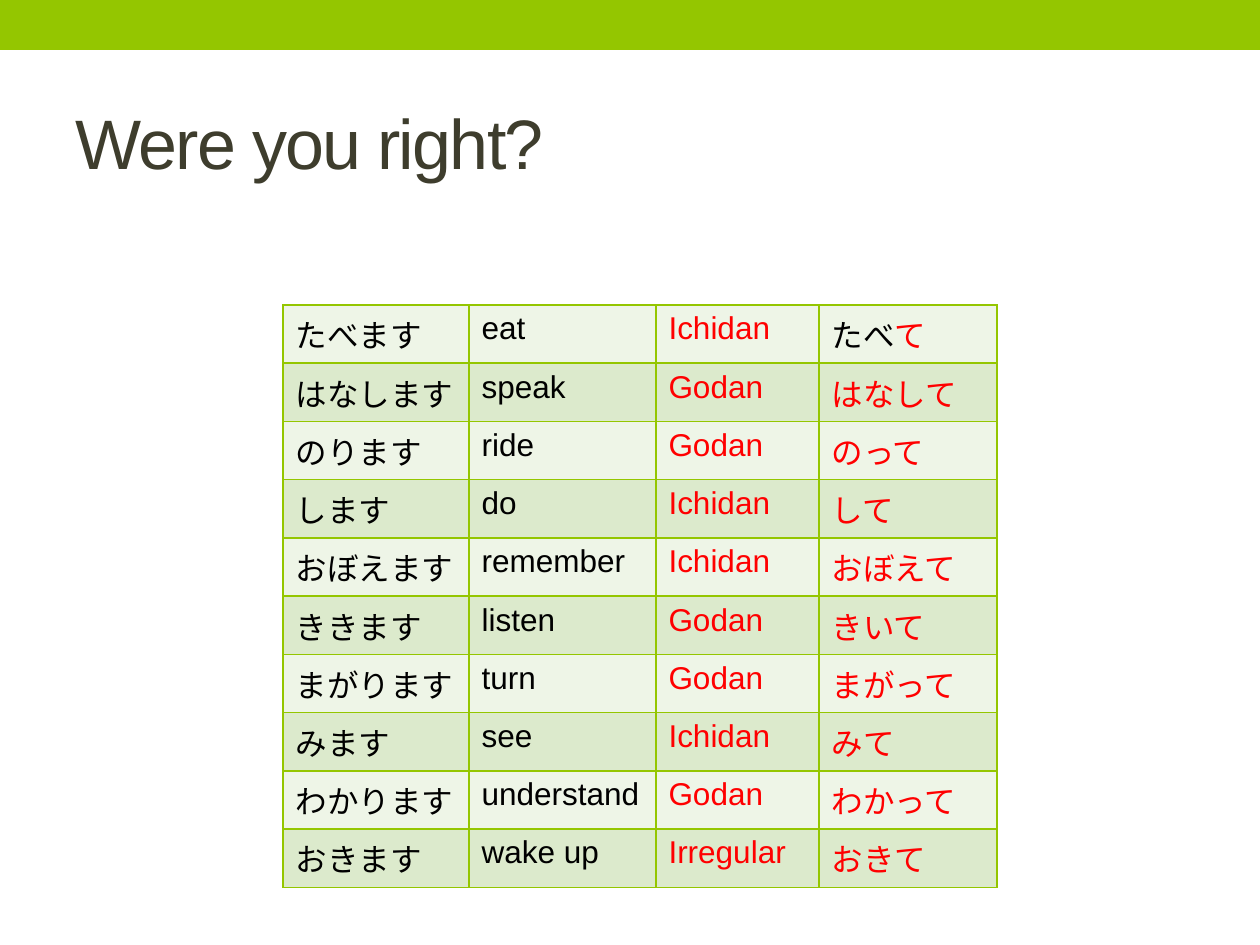
"""Build a slide that checks answers on Japanese verb groups and te-forms."""
import lxml.etree
import pptx
import pptx.dml.color
import pptx.enum.shapes
import pptx.enum.text
import pptx.oxml.ns
import pptx.util

EMU_PER_PX = 914400 // 126
GREEN, TITLE_COLOUR, BLACK, RED = "94C600", "3E3D2D", "000000", "FF0000"
BANDS = ("EEF5E7", "DCEACC")
COLUMN_WIDTHS = (186, 187, 163, 178)
ROW_HEIGHT = 51
VERBS = (
    ("たべます", "eat", "Ichidan", "たべ", "て"),
    ("はなします", "speak", "Godan", "", "はなして"),
    ("のります", "ride", "Godan", "", "のって"),
    ("します", "do", "Ichidan", "", "して"),
    ("おぼえます", "remember", "Ichidan", "", "おぼえて"),
    ("ききます", "listen", "Godan", "", "きいて"),
    ("まがります", "turn", "Godan", "", "まがって"),
    ("みます", "see", "Ichidan", "", "みて"),
    ("わかります", "understand", "Godan", "", "わかって"),
    ("おきます", "wake up", "Irregular", "", "おきて"),
)


def px(length):
    """Turn px into EMU."""
    return pptx.util.Emu(length * EMU_PER_PX)


def colour(value):
    """Turn a hex string into a colour."""
    return pptx.dml.color.RGBColor.from_string(value)


def set_attributes(target, values):
    """Set each named attribute of the target."""
    for name, value in values.items():
        setattr(target, name, value)


class SlideBuilder:
    """Hold the style and the current slide."""

    font_name = "Arial"

    def __init__(self, presentation):
        """Add a title-only slide."""
        self.slide = presentation.slides.add_slide(presentation.slide_layouts[5])

    def add_run(self, paragraph, text, size, hex_colour):
        """Add a formatted run to a paragraph."""
        run = paragraph.add_run()
        run.text = text
        set_attributes(run.font, {"name": self.font_name, "size": pptx.util.Pt(size)})
        run.font.color.rgb = colour(hex_colour)
        return run

    def add_bar(self, left, top, width, height, fill):
        """Add a plain filled rectangle."""
        shape = self.slide.shapes.add_shape(
            pptx.enum.shapes.MSO_SHAPE.RECTANGLE, *map(px, (left, top, width, height)))
        shape.shadow.inherit = False
        shape.fill.solid()
        shape.fill.fore_color.rgb = colour(fill)
        shape.line.fill.background()

    def set_title(self, text, left, top, width, height):
        """Place and format the title."""
        title = self.slide.shapes.title
        set_attributes(title, {"left": px(left), "top": px(top),
                               "width": px(width), "height": px(height)})
        title.text_frame.vertical_anchor = pptx.enum.text.MSO_ANCHOR.MIDDLE
        paragraph = title.text_frame.paragraphs[0]
        paragraph.alignment = pptx.enum.text.PP_ALIGN.LEFT
        run = self.add_run(paragraph, text, 40, TITLE_COLOUR)
        run.font._element.set("spc", "-100")

    def set_borders(self, cell, hex_colour, width):
        """Draw a line on all four sides of a cell."""
        properties = cell._tc.get_or_add_tcPr()
        qn = pptx.oxml.ns.qn
        for side in ("a:lnL", "a:lnR", "a:lnT", "a:lnB"):
            line = lxml.etree.SubElement(properties, qn(side), w=str(pptx.util.Pt(width)))
            fill = lxml.etree.SubElement(line, qn("a:solidFill"))
            lxml.etree.SubElement(fill, qn("a:srgbClr"), val=hex_colour)

    def add_table(self, left, top, widths, row_height, rows):
        """Add a banded table whose cells are lists of text and colour pairs."""
        frame = self.slide.shapes.add_table(
            len(rows), len(widths), px(left), px(top),
            px(sum(widths)), px(row_height * len(rows)))
        table = frame.table
        set_attributes(table, {"first_row": False, "horz_banding": False})
        for column, width in zip(table.columns, widths):
            column.width = px(width)
        for index, (row, contents) in enumerate(zip(table.rows, rows)):
            row.height = px(row_height)
            for cell, runs in zip(row.cells, contents):
                self.set_borders(cell, GREEN, 1)
                cell.fill.solid()
                cell.fill.fore_color.rgb = colour(BANDS[index % 2])
                for text, hex_colour in runs:
                    self.add_run(cell.text_frame.paragraphs[0], text, 18, hex_colour)


def verb_cells(verb, meaning, group, stem, answer):
    """Lay out one verb as four cells, with the answers in red."""
    te_form = [(stem, BLACK)] if stem else []
    return [[(verb, BLACK)], [(meaning, BLACK)], [(group, RED)], te_form + [(answer, RED)]]


def main():
    """Build and save the presentation."""
    presentation = pptx.Presentation()
    set_attributes(presentation, {"slide_width": px(1260), "slide_height": px(945)})
    builder = SlideBuilder(presentation)
    builder.add_bar(0, 0, 1260, 50, GREEN)
    builder.set_title("Were you right?", 63, 73, 1134, 136)
    builder.add_table(283, 305, COLUMN_WIDTHS, ROW_HEIGHT,
                      [verb_cells(*verb) for verb in VERBS])
    presentation.save("out.pptx")


if __name__ == "__main__":
    main()
